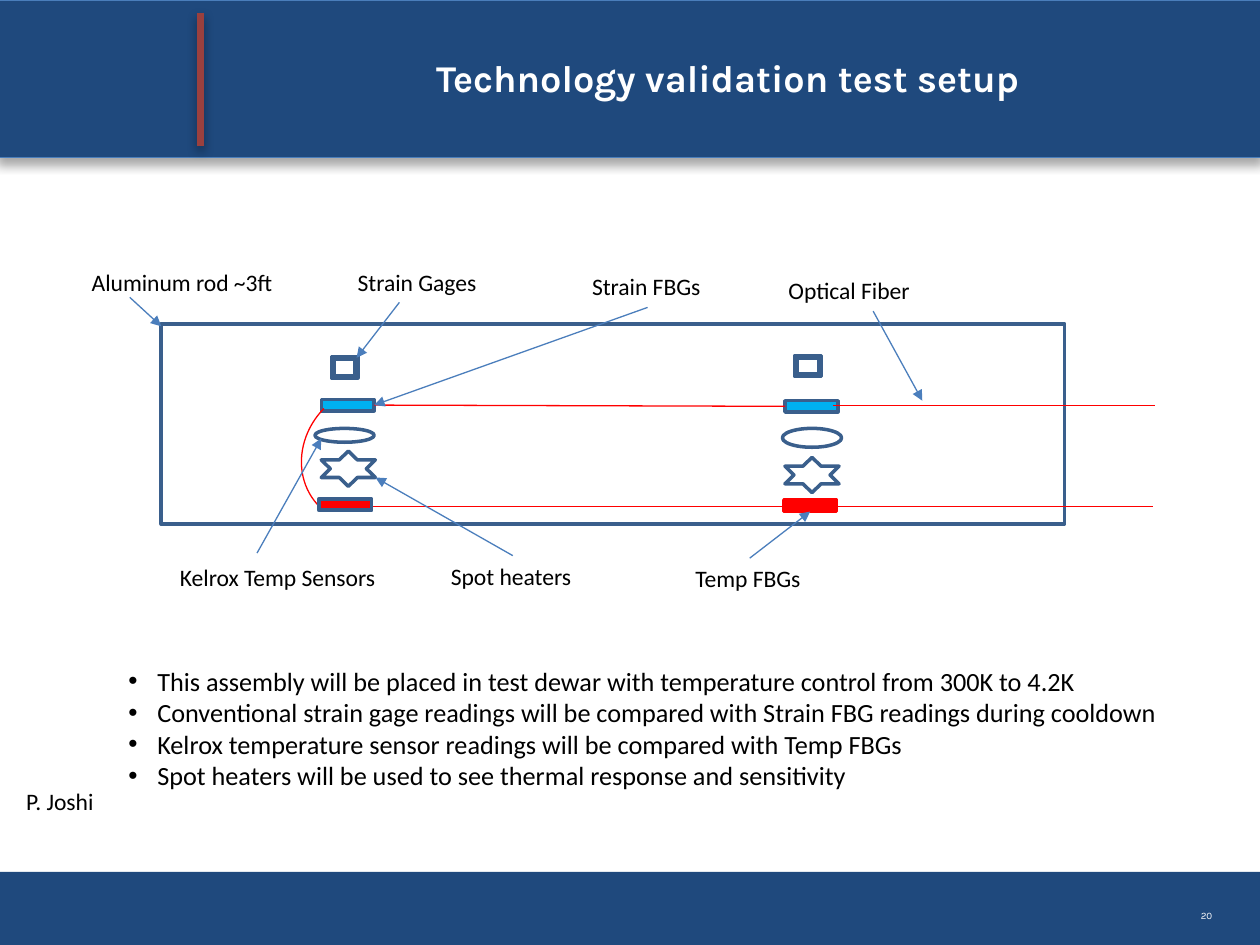
from dataclasses import dataclass
from typing import Any, NamedTuple, Optional

from lxml.etree import SubElement as Sub
from pptx import Presentation
from pptx.dml.color import RGBColor as Rgb
from pptx.enum.shapes import MSO_CONNECTOR as Conn, MSO_SHAPE as Geo
from pptx.enum.text import MSO_ANCHOR as Anchor, MSO_AUTO_SIZE as Fit, PP_ALIGN as Align
from pptx.oxml.ns import qn
from pptx.util import Emu, Pt

SCALE = 9144


@dataclass(frozen=True)
class Theme:
    navy: str = "1F497D"
    rim: str = "4A7EBB"
    bar: str = "9A403E"
    edge: str = "3A5F8C"
    arrow: str = "4B7EBC"
    cyan: str = "00B0F0"
    red: str = "FF0000"
    black: str = "000000"
    white: str = "FFFFFF"
    body: str = "Calibri"
    head: str = "Karla"
    title: float = 21.6
    list: float = 15
    label: float = 13.5
    page: float = 5.6


T = Theme()


class Box(NamedTuple):
    x: int
    y: int
    w: int
    h: int


class Part(NamedTuple):
    geo: Geo
    box: Box
    fill: Optional[str] = None
    line: Optional[str] = T.edge
    width: float = 2
    turn: float = 0
    shade: int = 0


class Wire(NamedTuple):
    start: tuple[int, int]
    end: tuple[int, int]
    color: str = T.arrow
    width: float = 0.75
    tip: bool = True
    shade: int = 0


class Note(NamedTuple):
    box: Box
    lines: tuple[str, ...]
    size: float = T.label
    font: str = T.body
    color: str = T.black
    bold: bool = False
    align: Align = Align.LEFT
    inset: int = 5
    anchor: Anchor = Anchor.TOP
    bullet: bool = False
    fill: Optional[str] = None


def px(n: float) -> Emu:
    return Emu(round(n * SCALE))


def shadow(item: Any, alpha: int) -> None:
    group = Sub(item.element.spPr, qn("a:effectLst"))
    if alpha:
        outer = Sub(group, qn("a:outerShdw"), blurRad=str(Pt(6)), dist=str(Pt(3)),
                    dir="5400000", rotWithShape="0")
        tone = Sub(outer, qn("a:srgbClr"), val=T.black)
        Sub(tone, qn("a:alpha"), val=str(alpha * 1000))


def paint(fill: Any, color: Optional[str]) -> None:
    if color:
        fill.solid()
        fill.fore_color.rgb = Rgb.from_string(color)
    else:
        fill.background()


def draw(slide: Any, part: Part) -> Any:
    shape = slide.shapes.add_shape(part.geo, *map(px, part.box))
    paint(shape.fill, part.fill)
    paint(shape.line.fill, part.line)
    if part.line:
        shape.line.width = Pt(part.width)
    shape.rotation = part.turn
    shadow(shape, part.shade)
    return shape


def link(slide: Any, wire: Wire) -> Any:
    line = slide.shapes.add_connector(
        Conn.STRAIGHT, *map(px, wire.start + wire.end))
    paint(line.line.fill, wire.color)
    line.line.width = Pt(wire.width)
    if wire.tip:
        Sub(line.element.spPr.find(qn("a:ln")), qn("a:tailEnd"), type="triangle")
    shadow(line, wire.shade)
    return line


def write(slide: Any, note: Note) -> None:
    shape = slide.shapes.add_textbox(*map(px, note.box))
    if note.fill:
        paint(shape.fill, note.fill)
    frame = shape.text_frame
    frame.word_wrap = False
    frame.auto_size = Fit.NONE
    frame.vertical_anchor = note.anchor
    frame.margin_left = frame.margin_right = px(10)
    frame.margin_top = frame.margin_bottom = px(note.inset)
    for i, line in enumerate(note.lines):
        para = frame.add_paragraph() if i else frame.paragraphs[0]
        para.alignment = note.align
        if note.bullet:
            props = para._p.get_or_add_pPr()
            props.set("marL", str(px(23)))
            props.set("indent", str(px(-23)))
            Sub(props, qn("a:buFont"), typeface="Arial")
            Sub(props, qn("a:buChar"), char="•")
        run = para.add_run()
        run.text = line
        run.font.size = Pt(note.size)
        run.font.name = note.font
        run.font.bold = note.bold
        run.font.color.rgb = Rgb.from_string(note.color)


def frame(slide: Any) -> None:
    draw(slide, Part(Geo.RECTANGLE, Box(-1, 692, 1003, 60), T.navy, None))
    draw(slide, Part(Geo.RECTANGLE, Box(-3, 0, 1004, 125), T.navy, T.rim, 1, shade=35))
    link(slide, Wire((159, 116), (159, 10), T.bar, 4, False, 38))
    write(slide, Note(Box(192, 43, 771, 37), ("Technology validation test setup",),
                      T.title, T.head, T.white, True, Align.CENTER, 10,
                      Anchor.MIDDLE, fill=T.navy))
    write(slide, Note(Box(944, 712, 28, 30), ("20",), T.page, T.head, T.white,
                      align=Align.RIGHT, inset=10, anchor=Anchor.MIDDLE))


def rig(slide: Any) -> None:
    draw(slide, Part(Geo.RECTANGLE, Box(128, 257, 717, 159)))
    sets = (
        (Box(263, 283, 21, 17), Box(255, 317, 42, 9), Box(250, 340, 47, 11), Box(255, 358, 43, 28)),
        (Box(631, 282, 21, 17), Box(623, 318, 42, 9), Box(621, 340, 47, 15), Box(623, 363, 43, 28)),
    )
    strain = []
    for gage, grate, sensor, heater in sets:
        draw(slide, Part(Geo.BEVEL, gage))
        strain.append(draw(slide, Part(Geo.RECTANGLE, grate, T.cyan)))
        draw(slide, Part(Geo.OVAL, sensor))
        draw(slide, Part(Geo.STAR_6_POINT, heater))

    fiber = link(slide, Wire((297, 320), (623, 321), T.red, tip=False))
    fiber.begin_connect(strain[0], 3)
    fiber.end_connect(strain[1], 1)
    link(slide, Wire((661, 322), (917, 322), T.red, tip=False))
    draw(slide, Part(Geo.ARC, Box(242, 303, 105, 116), None, T.red, 0.75, 224.5))
    link(slide, Wire((253, 402), (915, 402), T.red, tip=False))

    temp = draw(slide, Part(Geo.RECTANGLE, Box(622, 397, 42, 9), T.red, T.red))
    draw(slide, Part(Geo.RECTANGLE, Box(253, 396, 42, 9), T.red))

    for start, end in (((317, 240), (283, 284)), ((407, 441), (298, 379)),
                       ((693, 247), (732, 318)), ((204, 439), (255, 348)),
                       ((103, 236), (128, 259))):
        link(slide, Wire(start, end))
    link(slide, Wire((514, 244), (297, 322))).end_connect(strain[0], 3)
    link(slide, Wire((595, 443), (643, 406))).end_connect(temp, 2)


def notes(slide: Any) -> None:
    for x, y, w, text in (
        (274, 208, 116, "Strain Gages"), (460, 211, 108, "Strain FBGs"),
        (133, 442, 187, "Kelrox Temp Sensors"), (348, 441, 118, "Spot heaters"),
        (616, 214, 153, "Optical Fiber"), (63, 208, 166, "Aluminum rod ~3ft"),
        (542, 443, 107, "Temp FBGs"), (11, 620, 77, "P. Joshi"),
    ):
        write(slide, Note(Box(x, y, w, 33), (text,)))
    write(slide, Note(Box(92, 523, 848, 111), (
        "This assembly will be placed in test dewar with temperature control from 300K to 4.2K",
        "Conventional strain gage readings will be compared with Strain FBG readings during cooldown",
        "Kelrox temperature sensor readings will be compared with Temp FBGs",
        "Spot heaters will be used to see thermal response and sensitivity",
    ), T.list, bullet=True))


def main() -> None:
    deck = Presentation()
    deck.slide_width, deck.slide_height = px(1000), px(750)
    slide = deck.slides.add_slide(deck.slide_layouts[6])
    frame(slide)
    rig(slide)
    notes(slide)
    deck.save("out.pptx")


if __name__ == "__main__":
    main()
